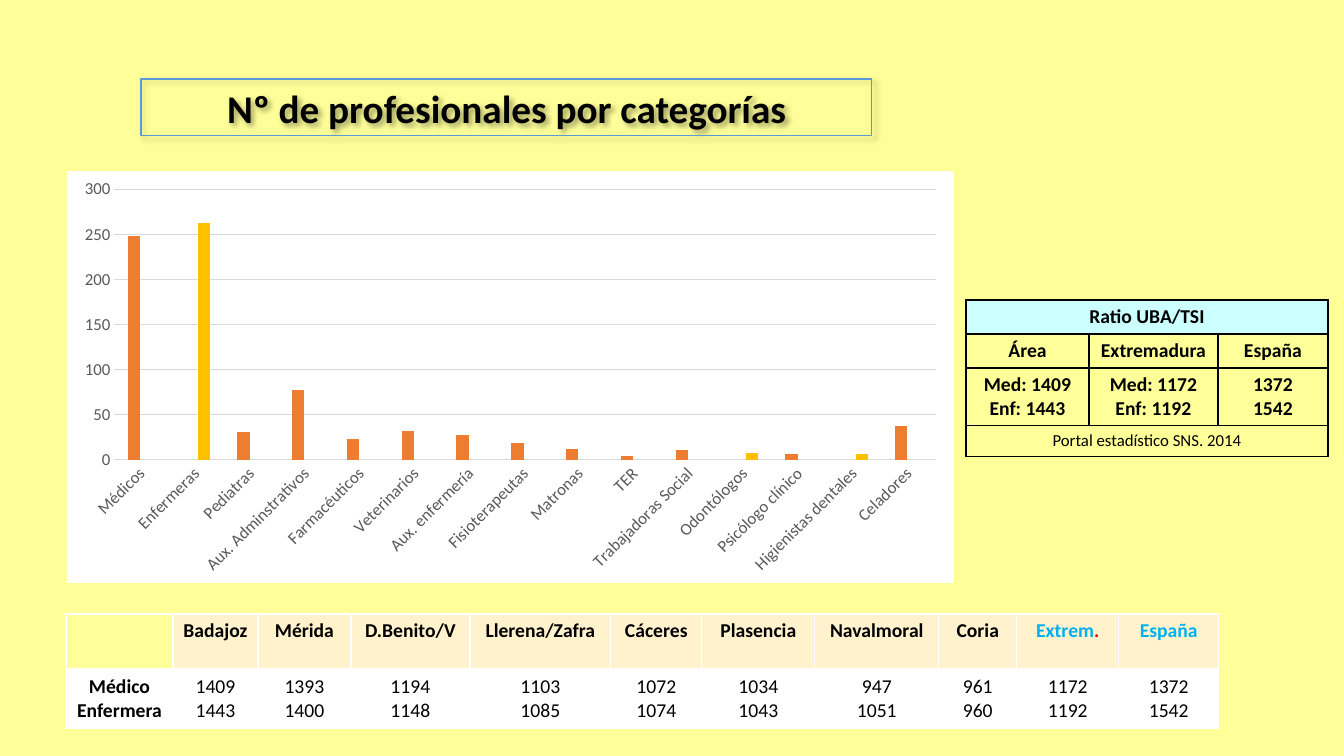
from lxml import etree
from pptx import Presentation
from pptx.chart.data import CategoryChartData
from pptx.dml.color import RGBColor
from pptx.enum.chart import XL_CHART_TYPE, XL_TICK_MARK
from pptx.enum.text import MSO_ANCHOR, PP_ALIGN
from pptx.oxml import parse_xml
from pptx.oxml.ns import nsdecls, qn
from pptx.util import Pt

COLUMN, NO_TICK = XL_CHART_TYPE.COLUMN_CLUSTERED, XL_TICK_MARK.NONE
CENTER, MIDDLE = PP_ALIGN.CENTER, MSO_ANCHOR.MIDDLE
PX = 914400 / 100.8


class Theme:
    font = "Calibri"
    background, black, white = "FFFF99", "000000", "FFFFFF"
    frame, grid, axis_text = "5B9BD5", "D9D9D9", "595959"
    bars = ("ED7D31", "FFC000")
    header, ratio_header = "FFF2CC", "CCFFFF"
    blue, red = "00B0F0", "FF0000"
    title_size, cell_size, small_size = 28, 14, 12


STAFF = {
    "Médicos": 248, "Enfermeras": 262, "Pediatras": 31, "Aux. Adminstrativos": 77,
    "Farmacéuticos": 23, "Veterinarios": 32, "Aux. enfermería": 27,
    "Fisioterapeutas": 19, "Matronas": 12, "TER": 4, "Trabajadoras Social": 11,
    "Odontólogos": 8, "Psicólogo clínico": 6, "Higienistas dentales": 6,
    "Celadores": 38,
}
SECOND_SERIES = {"Enfermeras", "Odontólogos", "Higienistas dentales"}

AREAS = [
    ("Badajoz", 1409, 1443), ("Mérida", 1393, 1400), ("D.Benito/V", 1194, 1148),
    ("Llerena/Zafra", 1103, 1085), ("Cáceres", 1072, 1074), ("Plasencia", 1034, 1043),
    ("Navalmoral", 947, 1051), ("Coria", 961, 960), ("Extrem", 1172, 1192),
    ("España", 1372, 1542),
]
AREA_WIDTHS = [107, 85, 93, 119, 141, 91, 113, 124, 78, 102, 100]

RATIOS = [
    ["Ratio UBA/TSI"],
    ["Área", "Extremadura", "España"],
    ["Med: 1409\nEnf: 1443", "Med: 1172\nEnf: 1192", "1372\n1542"],
    ["Portal estadístico SNS. 2014"],
]


def px(n):
    return round(n * PX)


def rgb(color):
    return RGBColor.from_string(color)


def style_font(font, size, color, bold=False):
    for name, value in {"name": Theme.font, "size": Pt(size), "bold": bold}.items():
        setattr(font, name, value)
    font.color.rgb = rgb(color)


def style_line(line, color):
    line.color.rgb = rgb(color)
    line.width = Pt(0.75)


def add_title(s, text, x, y, w, h):
    title = s.shapes.title
    for name, value in {"left": x, "top": y, "width": w, "height": h}.items():
        setattr(title, name, px(value))
    style_line(title.line, Theme.frame)
    title._element.spPr.append(parse_xml(
        f'<a:effectLst {nsdecls("a")}><a:outerShdw blurRad="50800" dist="38100" '
        f'dir="2700000" algn="tl" rotWithShape="0"><a:srgbClr val="{Theme.black}">'
        '<a:alpha val="40000"/></a:srgbClr></a:outerShdw></a:effectLst>'))
    tf = title.text_frame
    tf.vertical_anchor = MIDDLE
    p = tf.paragraphs[0]
    p.alignment = CENTER
    r = p.add_run()
    r.text = text
    style_font(r.font, Theme.title_size, Theme.black, True)


def style_axis(axis):
    axis.major_tick_mark = axis.minor_tick_mark = NO_TICK
    style_font(axis.tick_labels.font, Theme.small_size, Theme.axis_text)


def add_staff_chart(s, x, y, w, h):
    data = CategoryChartData()
    data.categories = list(STAFF)
    for name, second in (("Series 1", False), ("Series 2", True)):
        data.add_series(name, [n if (job in SECOND_SERIES) == second else None
                               for job, n in STAFF.items()])
    chart = s.shapes.add_chart(COLUMN, px(x), px(y), px(w), px(h), data).chart
    chart.has_legend = chart.has_title = False
    chart.element.find(qn("c:chart")).addnext(parse_xml(
        f'<c:spPr {nsdecls("c", "a")}><a:solidFill><a:srgbClr val="{Theme.white}"/>'
        '</a:solidFill><a:ln><a:noFill/></a:ln></c:spPr>'))

    plot = chart.plots[0]
    plot.gap_width, plot.overlap, plot.vary_by_categories = 219, -27, False
    for series, color in zip(plot.series, Theme.bars):
        series.format.fill.solid()
        series.format.fill.fore_color.rgb = rgb(color)

    jobs, counts = chart.category_axis, chart.value_axis
    style_axis(jobs)
    style_axis(counts)
    style_line(jobs.format.line, Theme.grid)
    body = jobs._element.find(qn("c:txPr")).find(qn("a:bodyPr"))
    body.set("rot", "-2700000")
    counts.format.line.fill.background()
    style_line(counts.major_gridlines.format.line, Theme.grid)
    for name, value in {"minimum_scale": 0, "maximum_scale": 300, "major_unit": 50}.items():
        setattr(counts, name, value)


def set_border(cell, color, bottom=1):
    """Draw all four sides 1 pt wide, except for the given bottom width."""
    tc_pr = cell._tc.get_or_add_tcPr()
    for side, width in zip("LRTB", (1, 1, 1, bottom)):
        ln = etree.SubElement(tc_pr, qn(f"a:ln{side}"), w=str(int(Pt(width))))
        fill = etree.SubElement(ln, qn("a:solidFill"))
        etree.SubElement(fill, qn("a:srgbClr"), val=color)


def fill_cell(cell, text, fill=None, size=Theme.cell_size, color=Theme.black, bold=True):
    cell.margin_left = cell.margin_right = px(5)
    if fill:
        cell.fill.solid()
        cell.fill.fore_color.rgb = rgb(fill)
    else:
        cell.fill.background()
    tf = cell.text_frame
    tf.text = text
    for p in tf.paragraphs:
        p.alignment = CENTER
        for r in p.runs:
            style_font(r.font, size, color, bold)


def add_table(s, x, y, widths, heights):
    table = s.shapes.add_table(len(heights), len(widths), px(x), px(y),
                               px(sum(widths)), px(sum(heights))).table
    table.first_row = table.horz_banding = False
    for column, width in zip(table.columns, widths):
        column.width = px(width)
    for row, height in zip(table.rows, heights):
        row.height = px(height)
    return table


def add_area_table(s, x, y):
    table = add_table(s, x, y, AREA_WIDTHS, [56, 58])
    for c in range(len(AREA_WIDTHS)):
        set_border(table.cell(0, c), Theme.white, bottom=3)
        set_border(table.cell(1, c), Theme.white)
    fill_cell(table.cell(0, 0), "", Theme.background)
    fill_cell(table.cell(1, 0), "Médico\nEnfermera", Theme.white)
    for c, (area, doctors, nurses) in enumerate(AREAS, 1):
        color = Theme.blue if area in ("Extrem", "España") else Theme.black
        fill_cell(table.cell(0, c), area, Theme.header, color=color)
        fill_cell(table.cell(1, c), f"{doctors}\n{nurses}", Theme.white, bold=False)
        if area == "Extrem":
            r = table.cell(0, c).text_frame.paragraphs[0].add_run()
            r.text = "."
            style_font(r.font, Theme.cell_size, Theme.red, True)


def add_ratio_table(s, x, y):
    table = add_table(s, x, y, [123, 129, 110], [34, 34, 57, 31])
    for cell in table.iter_cells():
        set_border(cell, Theme.black)
        cell.fill.background()
    formats = {0: {"fill": Theme.ratio_header},
               3: {"size": Theme.small_size, "bold": False}}
    for i, texts in enumerate(RATIOS):
        if len(texts) == 1:
            table.cell(i, 0).merge(table.cell(i, 2))
        for c, text in enumerate(texts):
            fill_cell(table.cell(i, c), text, **formats.get(i, {}))


def main():
    prs = Presentation()
    prs.slide_width, prs.slide_height = px(1344), px(756)
    s = prs.slides.add_slide(prs.slide_layouts.get_by_name("Title Only"))
    s.background.fill.solid()
    s.background.fill.fore_color.rgb = rgb(Theme.background)
    add_title(s, "Nº de profesionales por categorías", 141, 79, 731, 57)
    add_staff_chart(s, 67, 171, 887, 412)
    add_area_table(s, 66, 614)
    add_ratio_table(s, 966, 300)
    prs.save("out.pptx")


if __name__ == "__main__":
    main()
